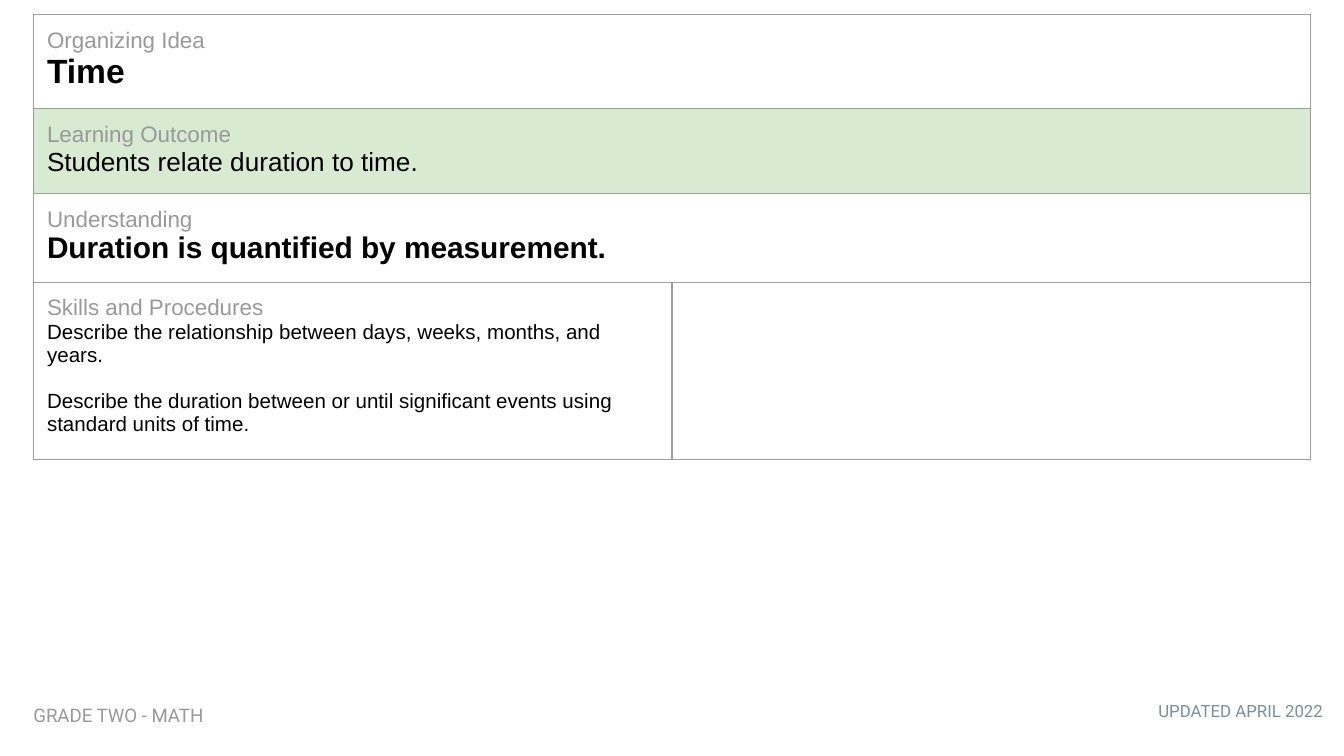
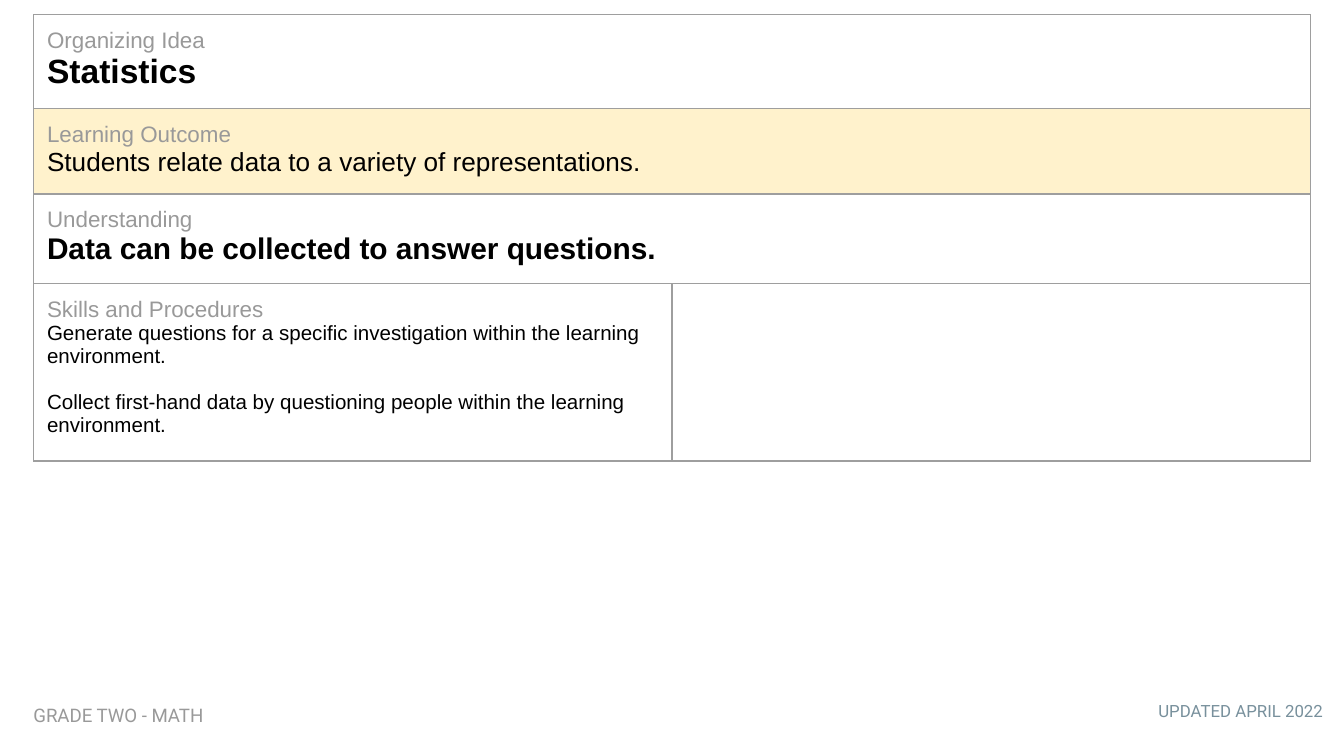
"""Build two Grade Two math curriculum slides, each with an outcome table and footers."""
from copy import deepcopy
from lxml.etree import SubElement
from pptx import Presentation
from pptx.dml.color import RGBColor
from pptx.enum.text import MSO_AUTO_SIZE, PP_ALIGN
from pptx.oxml.ns import qn
from pptx.util import Inches, Pt

COLORS = {"label": "999999", "body": "000000", "updated": "78909C",
          "border": "9E9E9E", "green": "D9EAD3", "yellow": "FFF2CC"}
LABELS = ["Organizing Idea", "Learning Outcome", "Understanding", "Skills and Procedures"]
STYLES = [dict(size=18, bold=True, after_break=True), dict(size=14, after_break=True),
          dict(size=16, bold=True), dict(size=11)]
SLIDES = [
    ("green", [
        ["Time"],
        ["Students relate duration to time."],
        ["Duration is quantified by measurement."],
        ["Describe the relationship between days, weeks, months, and years.",
         "Describe the duration between or until significant events using standard units of time."]]),
    ("yellow", [
        ["Statistics"],
        ["Students relate data to a variety of representations."],
        ["Data can be collected to answer questions."],
        ["Generate questions for a specific investigation within the learning environment.",
         "Collect first-hand data by questioning people within the learning environment."]]),
]
FOOTERS = [
    ("UPDATED APRIL 2022", (72.4, 51.4, 27, 3.5),
     dict(size=9, color="updated", align=PP_ALIGN.RIGHT)),
    ("GRADE TWO - MATH", (1.5, 51.5, 30.1, 3.7), dict(size=10, color="label")),
]

prs = Presentation()
prs.slide_width = Inches(10)
prs.slide_height = prs.slide_width * 9 // 16
UNIT = prs.slide_width // 100
LEFT, TOP = 2.5, 1.1
COLUMNS = [47.5, 47.5]
ROWS = [7, 6.3, 6.6, 13.2]


def grid(*units):
    """Turn hundredths of the slide width into lengths."""
    return [int(u * UNIT) for u in units]


def write(tf, text, size=12, color="body", bold=False, font="Arial",
          align=PP_ALIGN.LEFT, before=0, after_break=False):
    """Write text as a new paragraph, or after a line break in the last one."""
    if after_break:
        p = tf.paragraphs[-1]
        p.add_line_break()
        p._p[-1].append(deepcopy(p.runs[-1]._r.rPr))
    else:
        p = tf.add_paragraph() if tf.text else tf.paragraphs[0]
    p.alignment = align
    if before:
        p.space_before = Pt(before)
    r = p.add_run()
    r.text = text
    r.font.name, r.font.size, r.font.bold = font, Pt(size), bold
    r.font.color.rgb = RGBColor.from_string(COLORS[color])


for band, contents in SLIDES:
    s = prs.slides.add_slide(prs.slide_layouts[6])

    frame = s.shapes.add_table(len(ROWS), len(COLUMNS),
                               *grid(LEFT, TOP, sum(COLUMNS), sum(ROWS)))
    table = frame.table
    table.first_row = table.horz_banding = False
    for column, width in zip(table.columns, grid(*COLUMNS)):
        column.width = width
    for row, height in zip(table.rows, grid(*ROWS)):
        row.height = height

    for cell in table.iter_cells():
        cell.margin_left = cell.margin_right = Inches(0.1)
        cell.margin_top = cell.margin_bottom = Inches(0.1)
        tcPr = cell._tc.get_or_add_tcPr()
        for side in ("lnL", "lnR", "lnT", "lnB"):
            ln = SubElement(tcPr, qn(f"a:{side}"), w=str(Pt(0.75)))
            SubElement(SubElement(ln, qn("a:solidFill")), qn("a:srgbClr"), val=COLORS["border"])
        cell.fill.background()

    for i, (label, texts, style) in enumerate(zip(LABELS, contents, STYLES)):
        cell = table.cell(i, 0)
        if label != "Skills and Procedures":
            cell.merge(table.cell(i, 1))
        if label == "Learning Outcome":
            cell.fill.solid()
            cell.fill.fore_color.rgb = RGBColor.from_string(COLORS[band])
        write(cell.text_frame, label, color="label")
        for j, text in enumerate(texts):
            write(cell.text_frame, text, before=12.5 * j, **style)

    for text, box, style in FOOTERS:
        tf = s.shapes.add_textbox(*grid(*box)).text_frame
        tf.word_wrap = True
        tf.auto_size = MSO_AUTO_SIZE.SHAPE_TO_FIT_TEXT
        tf.margin_left = tf.margin_right = tf.margin_top = tf.margin_bottom = Inches(0.1)
        write(tf, text, font="Roboto", **style)

prs.save("out.pptx")
